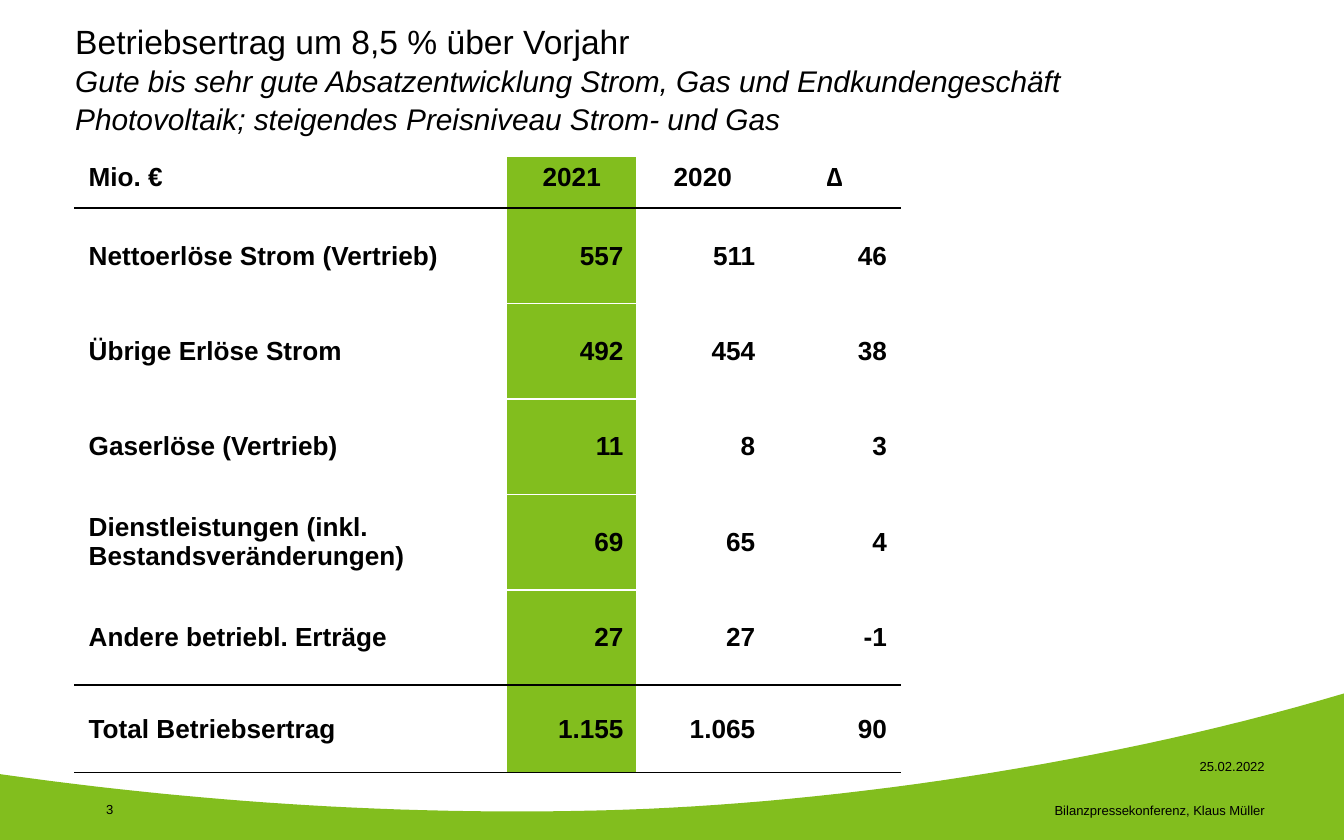
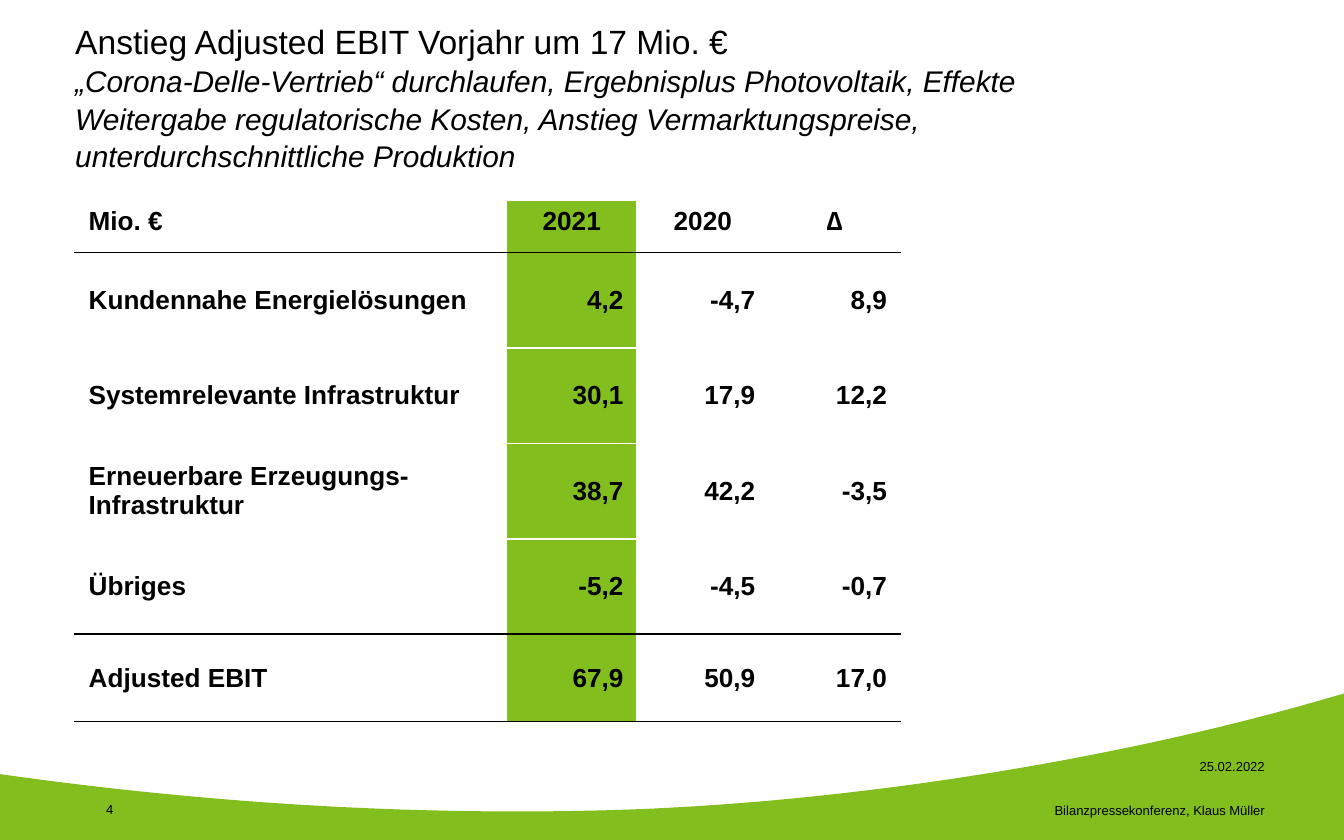
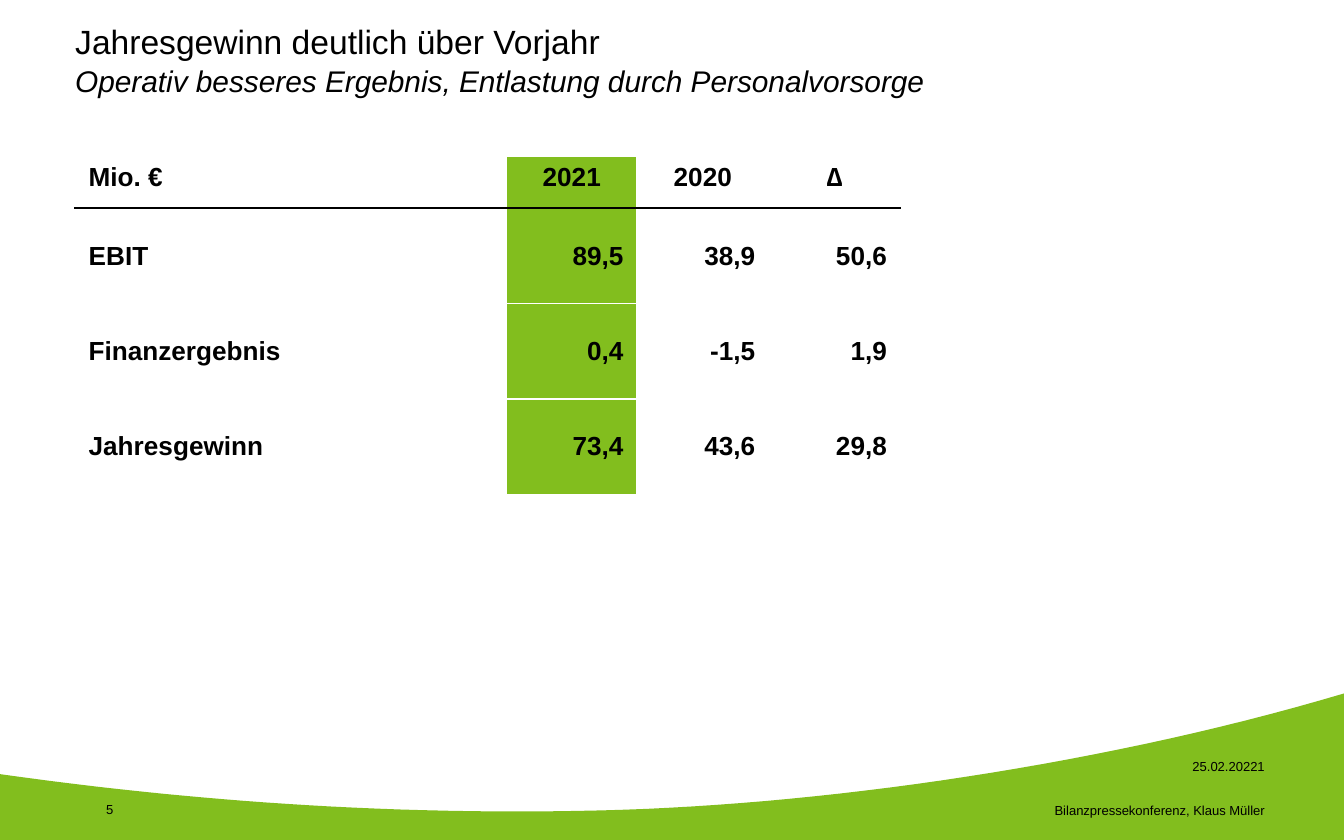
from copy import deepcopy

from pptx import Presentation
from pptx.dml.color import RGBColor
from pptx.enum.text import MSO_ANCHOR as Anchor
from pptx.enum.text import MSO_AUTO_SIZE as AutoSize
from pptx.enum.text import PP_ALIGN as Align
from pptx.oxml.ns import qn
from pptx.util import Inches, Pt
from lxml.etree import SubElement

COLORS = {"green": "82BE1E", "white": "FFFFFF", "black": "000000"}

# Text formats
HEADLINE = {"name": "Arial", "size": Pt(18), "bold": False, "italic": False}
SUBTITLE = {**HEADLINE, "size": Pt(16), "italic": True}
FOOTER = {**HEADLINE, "size": Pt(7)}
FIGURES = {**HEADLINE, "size": Pt(14), "bold": True}

# Table grid in inches
COLUMN_WIDTHS = (3.21, 0.97, 0.98, 0.98)
HEADER_HEIGHT, ROW_HEIGHT, TOTAL_HEIGHT = 0.39, 0.71, 0.65
HEADER = ("Mio. €", "2021", "2020", "∆")
HIGHLIGHT_COLUMN = 1

# Upper edge of the green wave: start point, then Bézier segments
WAVE_START = (10, 5.16)
WAVE_CURVES = (
    ((8.22, 5.69), (6.14, 5.99), (4.47, 6.03)),
    ((2.5, 6.08), (0.85, 5.88), (0, 5.76)),
)
CURVE_STEPS = 30

SLIDES = (
    {
        "headline": "Betriebsertrag um 8,5 % über Vorjahr",
        "subtitle": "Gute bis sehr gute Absatzentwicklung Strom, Gas und Endkundengeschäft "
                    "Photovoltaik; steigendes Preisniveau Strom- und Gas",
        "title_height": 0.9,
        "table_top": 1.16,
        "rows": (
            ("Nettoerlöse Strom (Vertrieb)", "557", "511", "46"),
            ("Übrige Erlöse Strom", "492", "454", "38"),
            ("Gaserlöse (Vertrieb)", "11", "8", "3"),
            ("Dienstleistungen (inkl. Bestandsveränderungen)", "69", "65", "4"),
            ("Andere betriebl. Erträge", "27", "27", "-1"),
        ),
        "total": ("Total Betriebsertrag", "1.155", "1.065", "90"),
        "date": "25.02.2022",
    },
    {
        "headline": "Anstieg Adjusted EBIT Vorjahr um 17 Mio. €",
        "subtitle": "„Corona-Delle-Vertrieb“ durchlaufen, Ergebnisplus Photovoltaik, Effekte "
                    "Weitergabe regulatorische Kosten, Anstieg Vermarktungspreise, "
                    "unterdurchschnittliche Produktion",
        "title_height": 1.15,
        "table_top": 1.49,
        "rows": (
            ("Kundennahe Energielösungen", "4,2", "-4,7", "8,9"),
            ("Systemrelevante Infrastruktur", "30,1", "17,9", "12,2"),
            ("Erneuerbare Erzeugungs-Infrastruktur", "38,7", "42,2", "-3,5"),
            ("Übriges", "-5,2", "-4,5", "-0,7"),
        ),
        "total": ("Adjusted EBIT", "67,9", "50,9", "17,0"),
        "date": "25.02.2022",
    },
    {
        "headline": "Jahresgewinn deutlich über Vorjahr",
        "subtitle": "Operativ besseres Ergebnis, Entlastung durch Personalvorsorge",
        "title_height": 0.9,
        "table_top": 1.16,
        "rows": (
            ("EBIT", "89,5", "38,9", "50,6"),
            ("Finanzergebnis", "0,4", "-1,5", "1,9"),
            ("Jahresgewinn", "73,4", "43,6", "29,8"),
        ),
        "total": None,
        "date": "25.02.20221",
    },
)


def rgb(color):
    return RGBColor.from_string(COLORS[color])


def wave_points():
    """Corner points of the wave, with its curves sampled evenly."""
    points = [(0, 6.25), (10, 6.25), WAVE_START]
    for curve in WAVE_CURVES:
        anchors = (points[-1], *curve)
        for step in range(1, CURVE_STEPS + 1):
            t = step / CURVE_STEPS
            weights = ((1 - t) ** 3, 3 * t * (1 - t) ** 2, 3 * t ** 2 * (1 - t), t ** 3)
            points.append(tuple(
                sum(w * anchor[axis] for w, anchor in zip(weights, anchors))
                for axis in (0, 1)
            ))
    return [(Inches(x), Inches(y)) for x, y in points]


class Deck:
    def __init__(self):
        self.prs = Presentation()
        self.prs.slide_width = Inches(10)
        self.prs.slide_height = Inches(6.25)
        self.slide = None

    def new_slide(self):
        self.slide = self.prs.slides.add_slide(self.prs.slide_layouts[5])

    def run(self, paragraph, text, style):
        run = paragraph.add_run()
        run.text = text
        for attribute, value in style.items():
            setattr(run.font, attribute, value)
        run.font.color.rgb = rgb("black")
        return run

    def frame(self, shape, anchor):
        settings = {
            "margin_left": 0, "margin_right": 0, "margin_top": 0, "margin_bottom": 0,
            "word_wrap": True, "auto_size": AutoSize.NONE, "vertical_anchor": anchor,
        }
        for attribute, value in settings.items():
            setattr(shape.text_frame, attribute, value)
        return shape.text_frame.paragraphs[0]

    def wave(self):
        start, *others = wave_points()
        builder = self.slide.shapes.build_freeform(*start)
        builder.add_line_segments(others)
        wave = builder.convert_to_shape()
        wave.shadow.inherit = False
        wave.fill.solid()
        wave.fill.fore_color.rgb = rgb("green")
        wave.line.fill.background()

    def title(self, headline, subtitle, height):
        title = self.slide.shapes.title
        title.left, title.top = Inches(0.56), Inches(0.14)
        title.width, title.height = Inches(7.49), Inches(height)
        paragraph = self.frame(title, Anchor.TOP)
        paragraph.alignment = Align.LEFT
        paragraph.line_spacing = 1.05
        first = self.run(paragraph, headline, HEADLINE)
        paragraph.add_line_break()
        # The break takes the headline size so that it keeps the line height
        first._r.getnext().append(deepcopy(first._r.rPr))
        self.run(paragraph, subtitle, SUBTITLE)

    def footer(self, text, left, top, width, height, align=Align.RIGHT):
        box = self.slide.shapes.add_textbox(*map(Inches, (left, top, width, height)))
        paragraph = self.frame(box, Anchor.BOTTOM)
        paragraph.alignment = align
        self.run(paragraph, text, FOOTER)

    def borders(self, cell, top, bottom):
        properties = cell._tc.get_or_add_tcPr()
        sides = {"lnL": "white", "lnR": "white", "lnT": top, "lnB": bottom}
        for side, color in sides.items():
            line = SubElement(properties, qn(f"a:{side}"), w=str(Pt(1)))
            fill = SubElement(line, qn("a:solidFill"))
            SubElement(fill, qn("a:srgbClr"), val=COLORS[color])

    def table(self, top, rows, total):
        lines = [HEADER, *rows]
        heights = [HEADER_HEIGHT] + [ROW_HEIGHT] * len(rows)
        black_rules = {1}  # row boundaries, counted from the top edge
        if total:
            black_rules |= {len(lines), len(lines) + 1}
            lines.append(total)
            heights.append(TOTAL_HEIGHT)

        table = self.slide.shapes.add_table(
            len(lines), len(HEADER), Inches(0.56), Inches(top),
            Inches(sum(COLUMN_WIDTHS)), Inches(sum(heights)),
        ).table
        table.first_row = table.horz_banding = False
        for column, width in zip(table.columns, COLUMN_WIDTHS):
            column.width = Inches(width)
        for row, height in zip(table.rows, heights):
            row.height = Inches(height)

        for r, values in enumerate(lines):
            upper, lower = ("black" if edge in black_rules else "white" for edge in (r, r + 1))
            value_align = Align.RIGHT if r else Align.CENTER
            for c, value in enumerate(values):
                cell = table.cell(r, c)
                self.borders(cell, upper, lower)
                cell.fill.solid()
                cell.fill.fore_color.rgb = rgb("green" if c == HIGHLIGHT_COLUMN else "white")
                cell.vertical_anchor = Anchor.MIDDLE if r else Anchor.TOP
                paragraph = cell.text_frame.paragraphs[0]
                paragraph.alignment = value_align if c else Align.LEFT
                self.run(paragraph, value, FIGURES)


def main():
    deck = Deck()
    for number, content in enumerate(SLIDES, start=3):
        deck.new_slide()
        # Band and title
        deck.wave()
        deck.title(content["headline"], content["subtitle"], content["title_height"])
        # Footers
        deck.footer(str(number), 0.79, 5.75, 0.88, 0.33, Align.LEFT)
        deck.footer("Bilanzpressekonferenz, Klaus Müller", 5.22, 5.76, 4.19, 0.33)
        deck.footer(content["date"], 7.44, 5.56, 1.97, 0.2)
        # Key figures
        deck.table(content["table_top"], content["rows"], content["total"])
    deck.prs.save("out.pptx")


if __name__ == "__main__":
    main()
